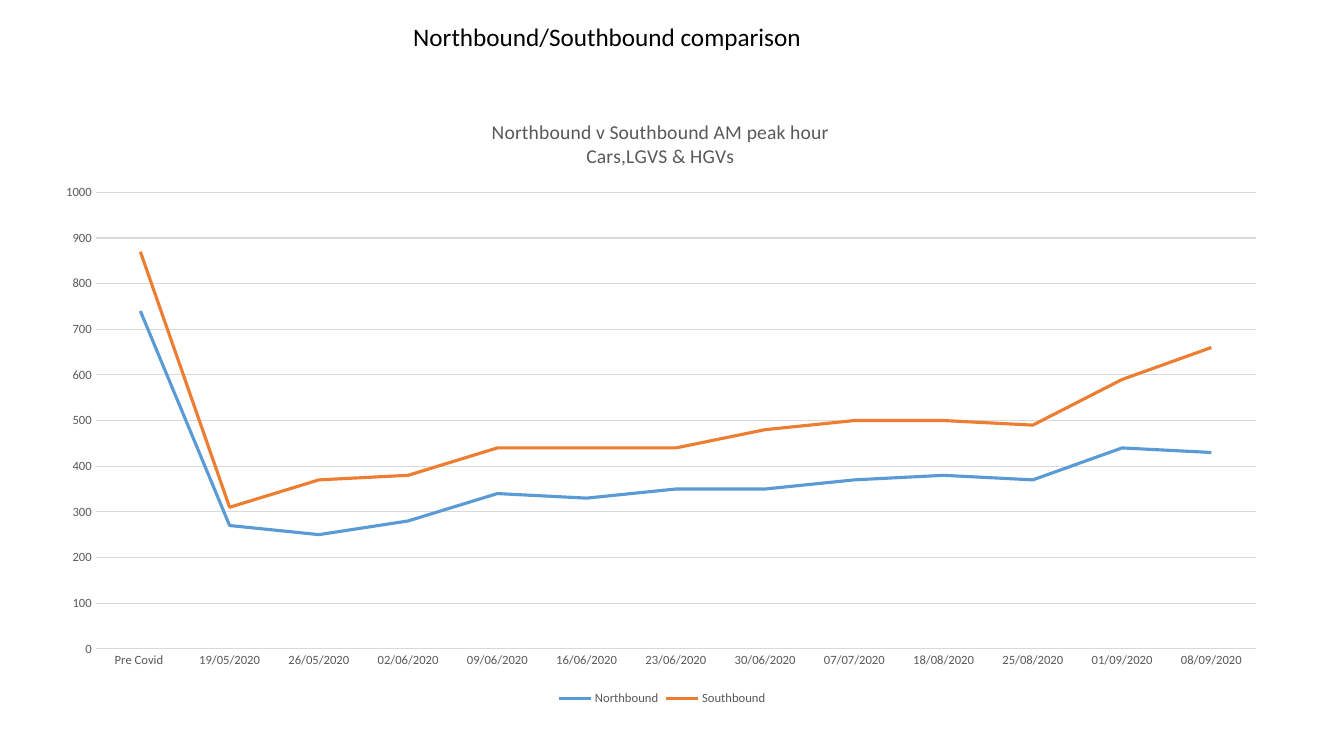
"""Build a slide comparing northbound and southbound traffic in the morning peak."""
from dataclasses import dataclass

from lxml import etree
from pptx import Presentation
from pptx import util as u
from pptx.chart import data as chart_data
from pptx.dml.color import RGBColor
from pptx.enum import chart as charts, text

FONT = "Calibri"
GREY = "595959"
RULE = "D9D9D9"


@dataclass
class Direction:
    name: str
    color: str
    counts: list[int]


DATES = ["Pre Covid ", "19/05/2020", "26/05/2020", "02/06/2020", "09/06/2020",
         "16/06/2020", "23/06/2020", "30/06/2020", "07/07/2020", "18/08/2020",
         "25/08/2020", "01/09/2020", "08/09/2020"]
DIRECTIONS = [
    Direction("Northbound", "5B9BD5",
              [740, 270, 250, 280, 340, 330, 350, 350, 370, 380, 370, 440, 430]),
    Direction("Southbound", "ED7D31",
              [870, 310, 370, 380, 440, 440, 440, 480, 500, 500, 490, 590, 660]),
]


def rgb(color: str) -> RGBColor:
    return RGBColor.from_string(color)


def style_font(font, size: float, color: str) -> None:
    font.name = FONT
    font.size = u.Pt(size)
    font.bold = False
    font.color.rgb = rgb(color)


def style_line(line, color: str, width: float) -> None:
    line.color.rgb = rgb(color)
    line.width = u.Pt(width)


def place(part, **settings: str | float) -> None:
    """Give a chart title or plot area a manual layout in fractions of the chart."""
    namespace = part.nsmap["c"]
    for former in part.findall(f"{{{namespace}}}layout"):
        part.remove(former)
    layout = etree.Element(f"{{{namespace}}}layout")
    manual = etree.SubElement(layout, f"{{{namespace}}}manualLayout")
    for tag, value in settings.items():
        etree.SubElement(manual, f"{{{namespace}}}{tag}").set("val", str(value))
    rich_text = part.find(f"{{{namespace}}}tx")
    part.insert(0 if rich_text is None else 1, layout)


def add_heading(slide) -> None:
    heading = slide.shapes.title
    heading.left, heading.top = u.Cm(10.16), u.Cm(0.41)
    heading.width, heading.height = u.Cm(10.85), u.Cm(1.02)
    frame = heading.text_frame
    frame.text = "Northbound/Southbound comparison"
    frame.word_wrap = True
    frame.auto_size = text.MSO_AUTO_SIZE.SHAPE_TO_FIT_TEXT
    frame.vertical_anchor = text.MSO_ANCHOR.TOP
    frame.paragraphs[0].alignment = text.PP_ALIGN.LEFT
    style_font(frame.paragraphs[0].runs[0].font, 18, "000000")


def style_chart_title(chart) -> None:
    frame = chart.chart_title.text_frame
    frame.text = "Northbound v Southbound AM peak hour\nCars,LGVS & HGVs"
    for paragraph in frame.paragraphs:
        paragraph.alignment = text.PP_ALIGN.CENTER
        for run in paragraph.runs:
            style_font(run.font, 14, GREY)
    chart.chart_title.include_in_layout = False
    place(chart.chart_title._element, xMode="edge", yMode="edge", x=0.36, y=0.03)


def style_axes(chart) -> None:
    for axis in (chart.category_axis, chart.value_axis):
        axis.major_tick_mark = axis.minor_tick_mark = charts.XL_TICK_MARK.NONE
        style_font(axis.tick_labels.font, 9, GREY)
    style_line(chart.category_axis.format.line, RULE, 0.75)
    counts = chart.value_axis
    counts.minimum_scale, counts.maximum_scale, counts.major_unit = 0, 1000, 100
    counts.format.line.fill.background()
    style_line(counts.major_gridlines.format.line, RULE, 0.75)


def add_comparison(slide) -> None:
    traffic = chart_data.CategoryChartData()
    traffic.categories = DATES
    for direction in DIRECTIONS:
        traffic.add_series(direction.name, direction.counts)
    chart = slide.shapes.add_chart(
        charts.XL_CHART_TYPE.LINE, u.Cm(1.07), u.Cm(2.44),
        u.Cm(31.24), u.Cm(15.44), traffic).chart
    style_font(chart.font, 10, "000000")
    style_chart_title(chart)
    style_axes(chart)
    chart.has_legend = True
    chart.legend.position = charts.XL_LEGEND_POSITION.BOTTOM
    chart.legend.include_in_layout = False
    style_font(chart.legend.font, 9, GREY)
    plot = chart.plots[0]
    plot.vary_by_categories = False
    for series, direction in zip(plot.series, DIRECTIONS):
        series.smooth = False
        series.marker.style = charts.XL_MARKER_STYLE.NONE
        style_line(series.format.line, direction.color, 2.25)
    place(chart._chartSpace.chart.plotArea, layoutTarget="inner", xMode="edge",
          yMode="edge", x=0.043, y=0.156, w=0.936, h=0.745)


def main() -> None:
    deck = Presentation()
    deck.slide_width, deck.slide_height = u.Cm(33.87), u.Cm(19.05)
    slide = deck.slides.add_slide(deck.slide_layouts[5])
    add_comparison(slide)
    add_heading(slide)
    deck.save("out.pptx")


if __name__ == "__main__":
    main()
